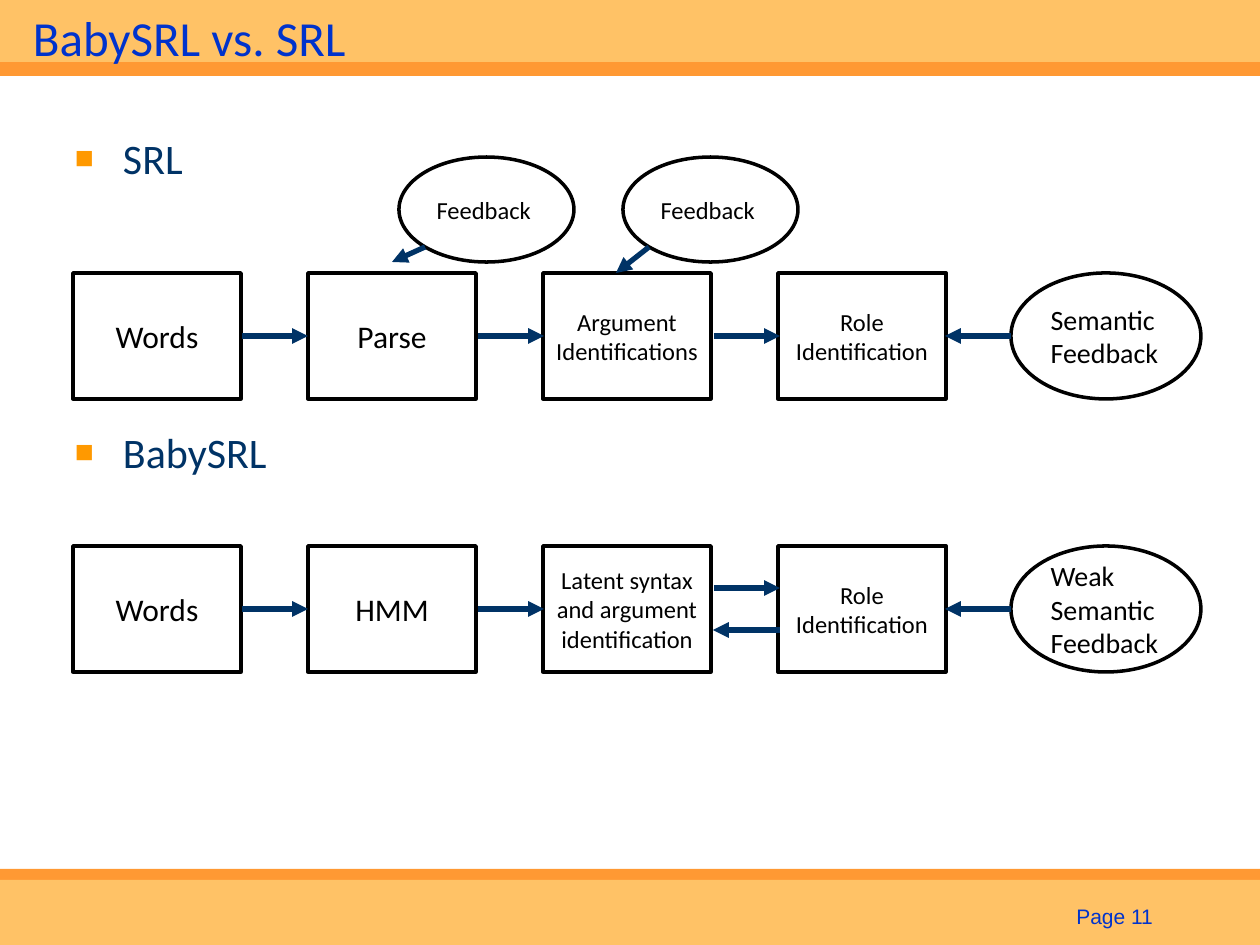
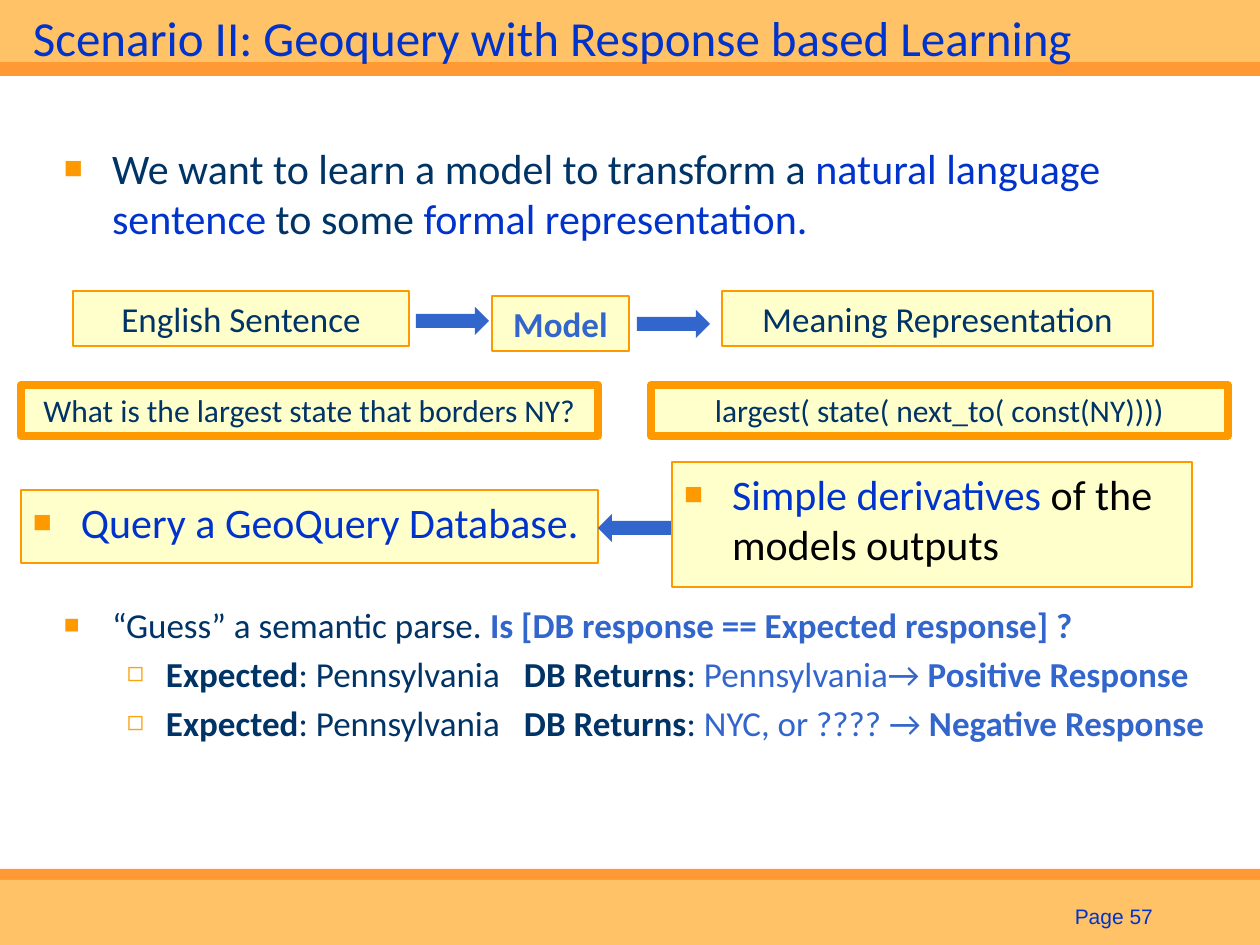
from lxml.etree import SubElement
from pptx import Presentation
from pptx.dml.color import RGBColor
from pptx.enum.shapes import MSO_CONNECTOR, MSO_SHAPE
from pptx.enum.text import MSO_ANCHOR, PP_ALIGN
from pptx.oxml.ns import qn
from pptx.util import Emu, Pt

SCALE = 914400 / 126
NAVY, BLUE, STEEL = "003366", "0033CC", "3366CC"
ORANGE, PEACH, CREAM, WHITE, BLACK = "FF9900", "FFC266", "FFFFCC", "FFFFFF", "000000"
BULLETS = {"■": (0, 48, 48, ORANGE, 75000), "◻": (1, 102, 39, "FBA313", 80000)}
LEFT, CENTER, RIGHT = PP_ALIGN.LEFT, PP_ALIGN.CENTER, PP_ALIGN.RIGHT
TOP, MIDDLE, BOTTOM = MSO_ANCHOR.TOP, MSO_ANCHOR.MIDDLE, MSO_ANCHOR.BOTTOM


def px(length):
    return Emu(round(length * SCALE))


def add_box(slide, preset, frame, fill=None, border=None, border_width=2, paragraphs=(),
            size=18, align=LEFT, anchor=TOP, side_margin=12, font="Calibri", tab=None):
    place = [px(length) for length in frame]
    if preset is None:
        box = slide.shapes.add_textbox(*place)
    else:
        box = slide.shapes.add_shape(preset, *place)
        box.shadow.inherit = False
        box.fill.solid()
        box.fill.fore_color.rgb = RGBColor.from_string(fill)
        if border:
            box.line.color.rgb = RGBColor.from_string(border)
            box.line.width = Pt(border_width)
        else:
            box.line.fill.background()
    body = box.text_frame
    body.word_wrap = True
    body.vertical_anchor = anchor
    body.margin_left = body.margin_right = px(side_margin)
    for number, (bullet, runs) in enumerate(paragraphs):
        paragraph = body.add_paragraph() if number else body.paragraphs[0]
        paragraph.alignment = align
        if bullet:
            level, margin, hanging, color, percent = BULLETS[bullet]
            paragraph.level = level
            if number:
                paragraph.space_before = Pt(size * 0.2)
            properties = paragraph._p.get_or_add_pPr()
            properties.set("marL", str(px(margin)))
            properties.set("indent", str(-px(hanging)))
            bullet_color = SubElement(properties, qn("a:buClr"))
            SubElement(bullet_color, qn("a:srgbClr"), val=color)
            SubElement(properties, qn("a:buSzPct"), val=str(percent))
            SubElement(properties, qn("a:buFont"), typeface="Arial")
            SubElement(properties, qn("a:buChar"), char=bullet)
            if tab and level:
                stops = SubElement(properties, qn("a:tabLst"))
                SubElement(stops, qn("a:tab"), pos=str(px(tab)), algn="l")
        for text, color, bold in runs:
            run = paragraph.add_run()
            run.text = text
            run.font.name = font
            run.font.size = Pt(size)
            run.font.bold = bold
            run.font.color.rgb = RGBColor.from_string(color)


deck = Presentation()
deck.slide_width, deck.slide_height = px(1260), px(945)

slides = []
for title, page in [("BabySRL vs. SRL", "Page 11"),
                    ("Scenario II: Geoquery with Response based Learning", "Page 57")]:
    slide = deck.slides.add_slide(deck.slide_layouts[6])
    for top, height, color in [(0, 76, "FF9933"), (0, 62, PEACH),
                               (869, 76, "FF9933"), (880, 65, PEACH)]:
        add_box(slide, MSO_SHAPE.RECTANGLE, (0, top, 1260, height), color)
    add_box(slide, None, (21, 0, 1134, 73), paragraphs=[("", [(title, BLUE, False)])],
            size=28, anchor=MIDDLE)
    add_box(slide, None, (1039, 903, 126, 32), paragraphs=[("", [(page, BLUE, False)])],
            size=12, align=RIGHT, anchor=BOTTOM, font="Arial")
    slides.append(slide)
pipelines, geoquery = slides

rows = [
    ("SRL", 126, 273, [("Words", 18), ("Parse", 18), ("Argument Identifications", 14),
                       ("Role Identification", 14)], ["Semantic Feedback"]),
    ("BabySRL", 420, 546, [("Words", 18), ("HMM", 18),
                           ("Latent syntax and argument identification", 14),
                           ("Role Identification", 14)], ["Weak", "Semantic Feedback"]),
]
arrows = [(425, 247, 392, 262), (649, 247, 616, 273),
          (714, 336, 780, 336), (714, 588, 780, 588), (780, 630, 713, 630)]
for heading, heading_top, top, stages, feedback in rows:
    add_box(pipelines, None, (63, heading_top, 1134, 64),
            paragraphs=[("■", [(heading, NAVY, False)])], size=24)
    for column, (stage, size) in enumerate(stages):
        add_box(pipelines, MSO_SHAPE.RECTANGLE, (73 + 235 * column, top, 168, 126), WHITE, BLACK,
                paragraphs=[("", [(stage, BLACK, False)])], size=size, align=CENTER,
                anchor=MIDDLE, side_margin=6)
    add_box(pipelines, MSO_SHAPE.OVAL, (1011, top, 190, 126), WHITE, BLACK,
            paragraphs=[("", [(line, BLACK, False)]) for line in feedback],
            size=16, anchor=MIDDLE)
    middle = top + 63
    arrows += [(242 + 236 * gap, middle, 308 + 236 * gap, middle) for gap in range(2)]
    arrows.append((1011, middle, 945, middle))

for left in (399, 623):
    add_box(pipelines, MSO_SHAPE.OVAL, (left, 157, 175, 105), WHITE, BLACK,
            paragraphs=[("", [("Feedback", BLACK, False)])], size=14, anchor=MIDDLE)

for ends in arrows:
    arrow = pipelines.shapes.add_connector(MSO_CONNECTOR.STRAIGHT, *[px(end) for end in ends])
    arrow.line.color.rgb = RGBColor.from_string(NAVY)
    arrow.line.width = Pt(3)
    SubElement(arrow.line._get_or_add_ln(), qn("a:tailEnd"), type="triangle")
    SubElement(arrow._element.spPr, qn("a:effectLst"))

add_box(geoquery, None, (52, 136, 1177, 115), size=24, paragraphs=[
    ("■", [("We want to learn a model to transform a ", NAVY, False),
           ("natural language sentence", BLUE, False), (" to some ", NAVY, False),
           ("formal representation.", BLUE, False)])])

responses = [("■", [("“Guess” a semantic parse. ", NAVY, False),
                    ("Is [DB response == Expected response] ?", STEEL, True)])]
for returned, verdict in [("Pennsylvania→ ", "Positive Response"),
                          ("NYC, or ???? → ", "Negative Response")]:
    responses.append(("◻", [("Expected", NAVY, True), (": Pennsylvania\t", NAVY, False),
                            ("DB Returns", NAVY, True), (": ", NAVY, False),
                            (returned, STEEL, False), (verdict, STEEL, True)]))
add_box(geoquery, None, (52, 597, 1177, 160), paragraphs=responses, size=20, tab=460)

for text, frame, size, color, bold, border_width in [
    ("English Sentence", (73, 291, 336, 55), 20, NAVY, False, 0.75),
    ("Model", (492, 296, 137, 55), 20, STEEL, True, 0.75),
    ("Meaning Representation", (722, 291, 431, 55), 20, NAVY, False, 0.75),
    ("What is the largest state that borders NY?", (21, 385, 577, 51), 18, NAVY, False, 4.5),
    ("largest( state( next_to( const(NY))))", (651, 385, 577, 51), 18, NAVY, False, 4.5),
]:
    add_box(geoquery, MSO_SHAPE.RECTANGLE, frame, CREAM, ORANGE, border_width,
            [("", [(text, color, bold)])], size, CENTER)

for frame, runs in [
    ((672, 462, 520, 125), [("Simple derivatives ", BLUE, False),
                            ("of the models outputs", BLACK, False)]),
    ((21, 490, 577, 73), [("Query a GeoQuery Database.", BLUE, False)]),
]:
    add_box(geoquery, MSO_SHAPE.RECTANGLE, frame, CREAM, ORANGE, 0.75, [("■", runs)], 24)

for direction, left, top in [(MSO_SHAPE.RIGHT_ARROW, 416, 307),
                             (MSO_SHAPE.RIGHT_ARROW, 637, 310),
                             (MSO_SHAPE.LEFT_ARROW, 598, 514)]:
    add_box(geoquery, direction, (left, top, 73, 28), STEEL)

deck.save("out.pptx")
